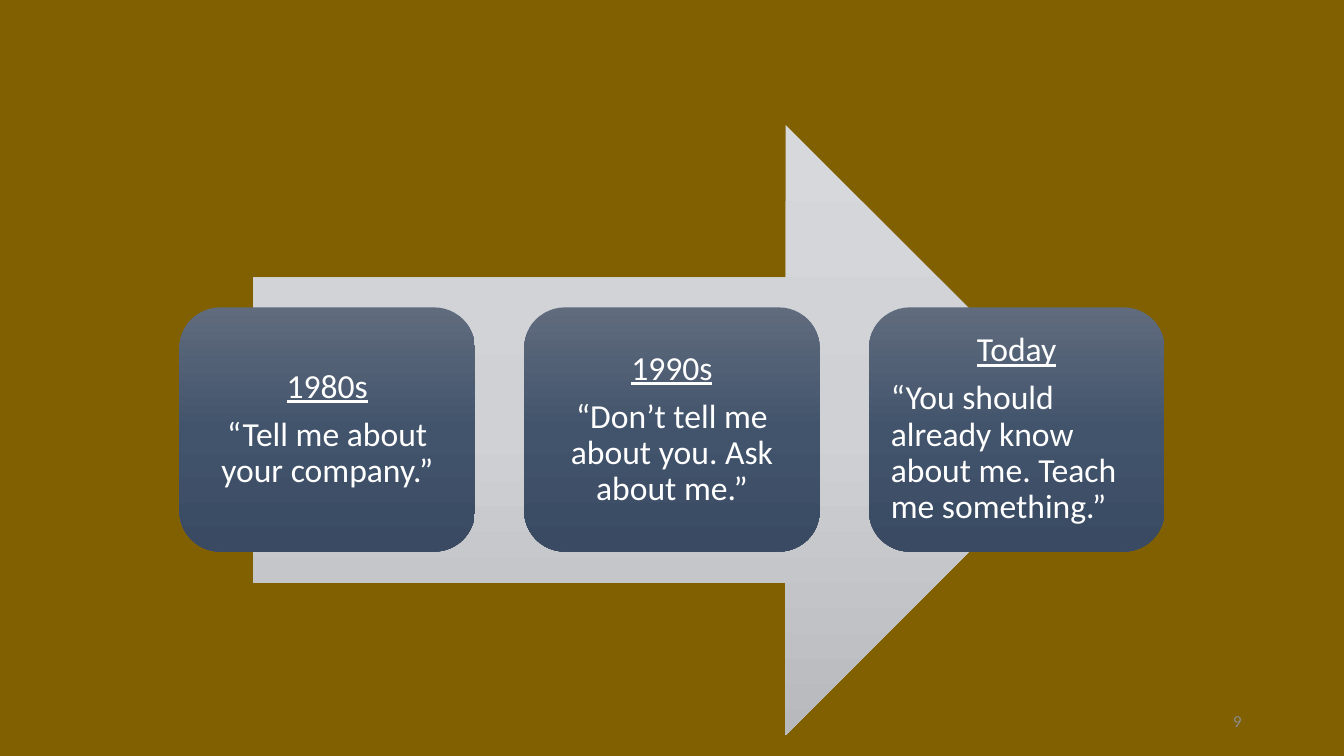
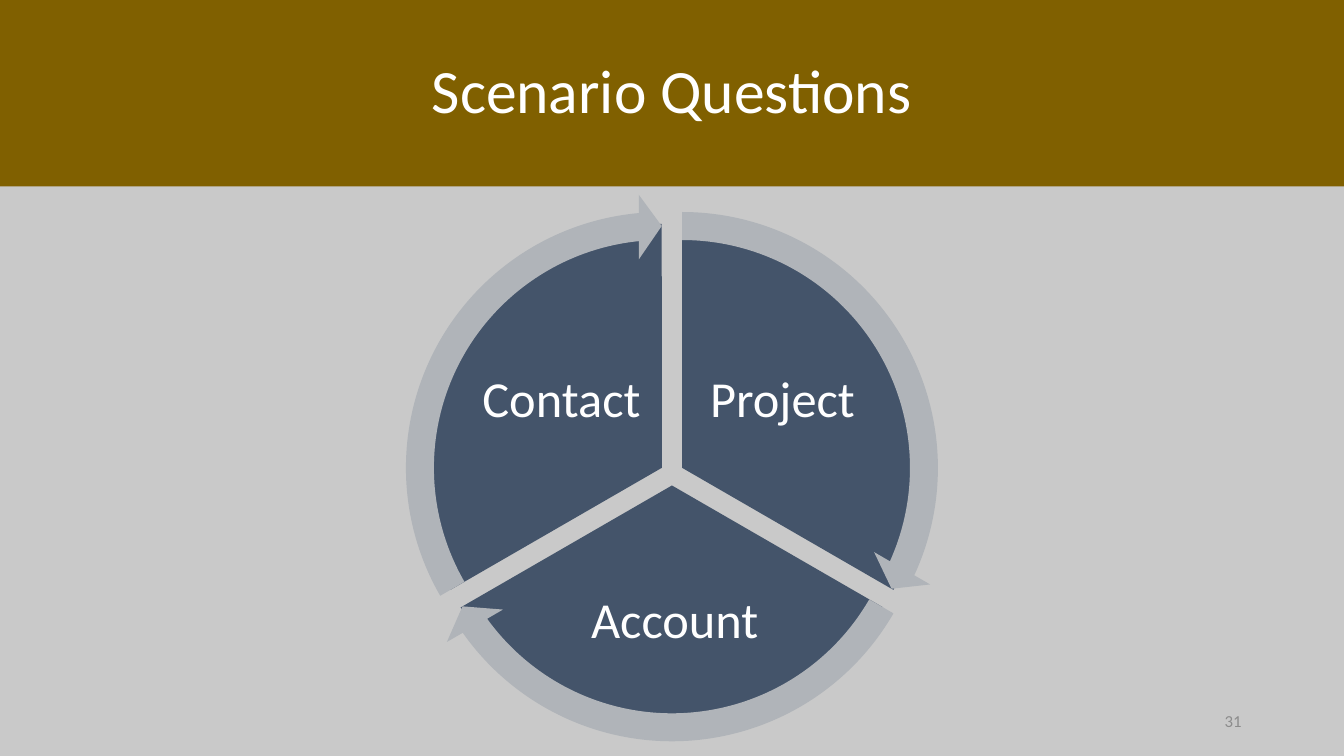
from copy import deepcopy
from math import cos, radians, sin

from pptx import Presentation
from pptx.dml.color import RGBColor
from pptx.enum.shapes import MSO_SHAPE
from pptx.enum.text import MSO_ANCHOR, PP_ALIGN
from pptx.oxml.ns import qn
from pptx.util import Pt

COLORS = {
    "brown": "806000",
    "gray": "C9C9C9",
    "navy": "44546A",
    "ring": "B0B4B9",
    "white": "FFFFFF",
    "number": "8C8C8C",
}
GRADIENTS = {
    "arrow": ["D6D8DB", "CFD1D4", "B7B9BD"],
    "card": ["606B7D", "42546C", "394A62"],
}
FONT = "Calibri"
SLIDE_WIDTH, SLIDE_HEIGHT = 960, 540
TITLE_BAND = (0, 0, SLIDE_WIDTH, 133.2)
NUMBER_BOX = (678, 500.4, 216, 28.8)
ARROW_BOX = (180.7, 89.3, 598.3, 435.6)
CARDS_BOX = (128.2, 219.6, 703.6, 174.4)
CYCLE_CENTER = (480, 338.4)

TITLE = {"size": Pt(44)}
NUMBER = {"size": Pt(12)}
CARD_TEXT = {"size": Pt(24)}
CYCLE_TEXT = {"size": Pt(36)}

ERAS = [
    ("1980s", "“Tell me about your company.”", PP_ALIGN.CENTER),
    ("1990s", "“Don’t tell me about you. Ask about me.”", PP_ALIGN.CENTER),
    ("Today", "“You should already know about me. Teach me something.”", PP_ALIGN.LEFT),
]
SECTORS = [
    ("Project", -90, (79, -52)),
    ("Account", 30, (2, 105.7)),
    ("Contact", 150, (-79, -52)),
]


def set_attributes(target, values):
    for name, value in values.items():
        setattr(target, name, value)


def points(box):
    return [Pt(length) for length in box]


def centered_box(x, y, width, height):
    return x - width / 2, y - height / 2, width, height


def paint(fill, color):
    fill.solid()
    fill.fore_color.rgb = RGBColor.from_string(COLORS[color])


def paint_gradient(shape, name):
    shape.fill.gradient()
    stop_list = shape.fill._xPr.find(qn("a:gradFill")).find(qn("a:gsLst"))
    stop_list.append(deepcopy(stop_list[-1]))
    shape.fill.gradient_angle = 270
    for index, (stop, color) in enumerate(zip(shape.fill.gradient_stops, GRADIENTS[name])):
        stop.position = index / 2
        stop.color.rgb = RGBColor.from_string(color)


def add_shape(slide, kind, box, color=None, gradient=None, adjustments=()):
    shape = slide.shapes.add_shape(kind, *points(box))
    shape.shadow.inherit = False
    shape.line.fill.background()
    if gradient:
        paint_gradient(shape, gradient)
    else:
        paint(shape.fill, color)
    for index, value in enumerate(adjustments):
        shape.adjustments[index] = value
    return shape


def prepare_frame(shape, inset=None):
    frame = shape.text_frame
    set_attributes(frame, {"word_wrap": True, "vertical_anchor": MSO_ANCHOR.MIDDLE})
    if inset is not None:
        sides = ("margin_left", "margin_top", "margin_right", "margin_bottom")
        set_attributes(frame, dict.fromkeys(sides, Pt(inset)))
    return frame


def write(paragraph, text, font, color="white", **layout):
    set_attributes(paragraph, {"alignment": PP_ALIGN.CENTER, "line_spacing": 0.9, **layout})
    run = paragraph.add_run()
    run.text = text
    set_attributes(run.font, {"name": FONT, **font})
    run.font.color.rgb = RGBColor.from_string(COLORS[color])


def add_slide(presentation, background, number):
    slide = presentation.slides.add_slide(presentation.slide_layouts[6])
    paint(slide.background.fill, background)
    frame = prepare_frame(slide.shapes.add_textbox(*points(NUMBER_BOX)))
    write(frame.paragraphs[0], number, NUMBER, "number",
          alignment=PP_ALIGN.RIGHT, line_spacing=1.0)
    return slide


def add_title_band(slide, box, text):
    band = add_shape(slide, MSO_SHAPE.RECTANGLE, box, "brown")
    write(prepare_frame(band).paragraphs[0], text, TITLE)


def add_era_cards(slide, box, eras, gap=35.2):
    left, top, width, height = box
    card_width = (width - gap * (len(eras) - 1)) / len(eras)
    for index, (era, quote, alignment) in enumerate(eras):
        card_box = (left + index * (card_width + gap), top, card_width, height)
        card = add_shape(slide, MSO_SHAPE.ROUNDED_RECTANGLE, card_box, gradient="card")
        frame = prepare_frame(card, 7.2)
        write(frame.paragraphs[0], era, {**CARD_TEXT, "underline": True}, space_after=Pt(8.4))
        write(frame.add_paragraph(), quote, CARD_TEXT,
              alignment=alignment, space_after=Pt(8.4))


def add_cycle(slide, center, sectors, pie_size=348.5, ring_size=391.7, spread=8.4):
    center_x, center_y = center
    sweep = 360 / len(sectors)
    head = 3.275
    rings = []
    for label, start_angle, (label_x, label_y) in sectors:
        middle = radians(start_angle + sweep / 2)
        x = center_x + spread * cos(middle)
        y = center_y + spread * sin(middle)
        start = start_angle % 360 * 0.6
        end = (start_angle + sweep) % 360 * 0.6
        add_shape(slide, MSO_SHAPE.PIE, centered_box(x, y, pie_size, pie_size),
                  "navy", adjustments=(start, end))
        label_box = centered_box(center_x + label_x, center_y + label_y, 186, 92)
        frame = prepare_frame(slide.shapes.add_textbox(*points(label_box)), 3.6)
        write(frame.paragraphs[0], label, CYCLE_TEXT, space_after=Pt(12.6))
        rings.append((centered_box(x, y, ring_size, ring_size),
                      (0.051, head, end - head, start, 0.059)))
    for ring_box, adjustments in rings:
        add_shape(slide, MSO_SHAPE.CIRCULAR_ARROW, ring_box, "ring", adjustments=adjustments)


def build_eras_slide(presentation):
    slide = add_slide(presentation, "brown", "9")
    add_shape(slide, MSO_SHAPE.RIGHT_ARROW, ARROW_BOX, gradient="arrow")
    add_era_cards(slide, CARDS_BOX, ERAS)


def build_scenario_slide(presentation):
    slide = add_slide(presentation, "gray", "31")
    add_title_band(slide, TITLE_BAND, "Scenario Questions")
    add_cycle(slide, CYCLE_CENTER, SECTORS)


def main():
    presentation = Presentation()
    set_attributes(presentation, {"slide_width": Pt(SLIDE_WIDTH), "slide_height": Pt(SLIDE_HEIGHT)})
    build_eras_slide(presentation)
    build_scenario_slide(presentation)
    presentation.save("out.pptx")


if __name__ == "__main__":
    main()
